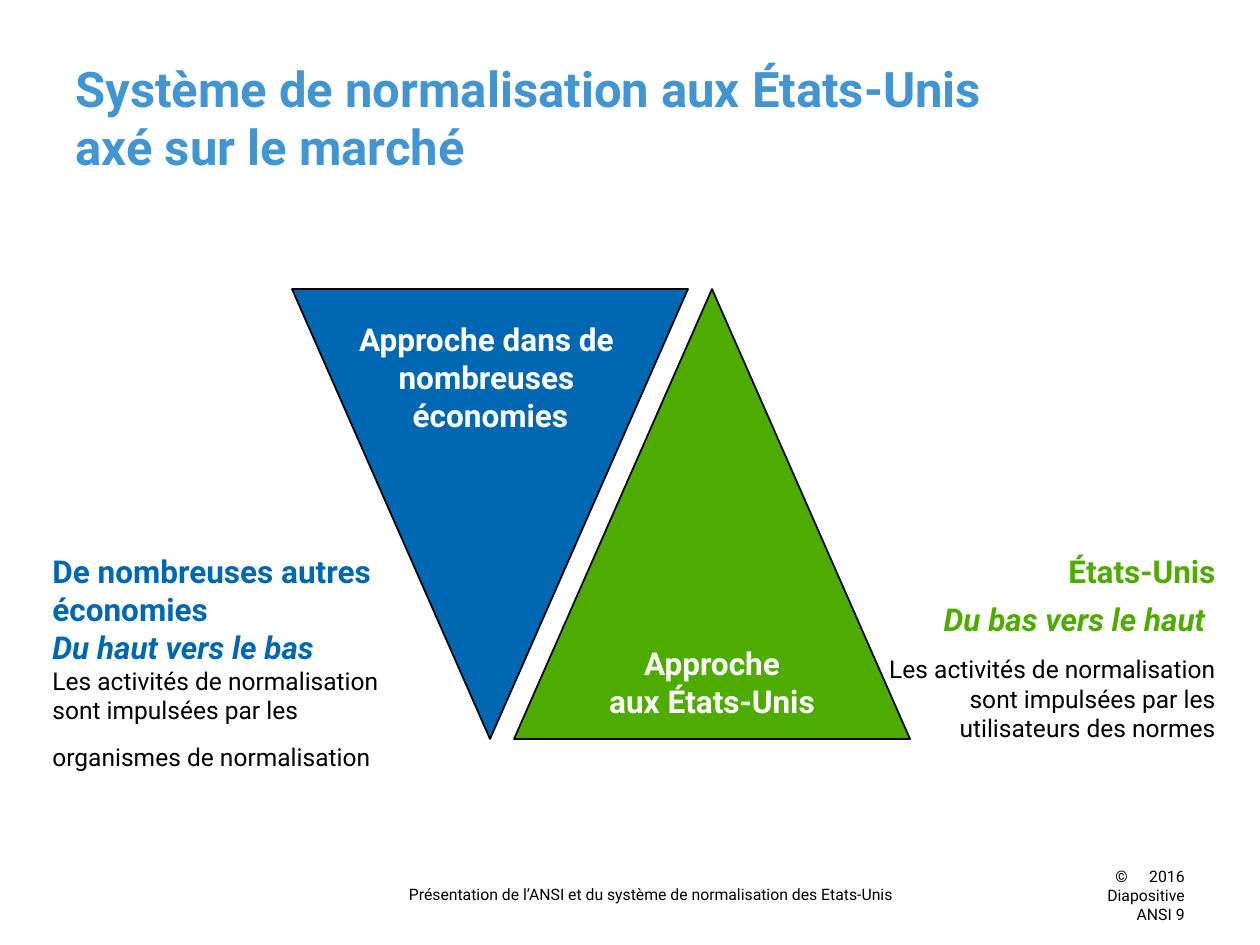
from pptx import Presentation
from pptx.dml.color import RGBColor
from pptx.enum.shapes import MSO_SHAPE
from pptx.enum.text import MSO_ANCHOR, MSO_AUTO_SIZE, PP_ALIGN as ALIGN
from pptx.oxml import parse_xml
from pptx.oxml.ns import nsdecls
from pptx.util import Pt

EMU_PER_PX = 914400 / 126
FONT = "Roboto"
COLORS = {
    "title": "4195D3",
    "blue": "0068B3",
    "green": "4EAC00",
    "white": "FFFFFF",
    "black": "000000",
}


def px(*lengths):
    """Turn px lengths into EMU."""
    return [round(length * EMU_PER_PX) for length in lengths]


def write_paragraph(paragraph, runs, align, space_before=0):
    """Fill a paragraph from (text, size, color, bold, italic) runs; a newline is a line break."""
    paragraph.alignment = align
    if space_before:
        paragraph.space_before = Pt(space_before)
    for text, size, color, bold, italic in runs:
        for index, line in enumerate(text.split("\n")):
            if index:
                paragraph.add_line_break()
            if not line:
                continue
            run = paragraph.add_run()
            run.text = line
            font_format = {"name": FONT, "size": Pt(size), "bold": bold, "italic": italic}
            for name, value in font_format.items():
                setattr(run.font, name, value)
            run.font.color.rgb = RGBColor.from_string(COLORS[color])


presentation = Presentation()
presentation.slide_width, presentation.slide_height = px(1260, 945)
slide = presentation.slides.add_slide(presentation.slide_layouts[5])

# Title
title = slide.shapes.title
title.left, title.top, title.width, title.height = px(63, 38, 1134, 158)
title_format = {
    "word_wrap": True,
    "auto_size": MSO_AUTO_SIZE.NONE,
    "vertical_anchor": MSO_ANCHOR.MIDDLE,
}
for name, value in title_format.items():
    setattr(title.text_frame, name, value)
write_paragraph(
    title.text_frame.paragraphs[0],
    [("Système de normalisation aux États-Unis\naxé sur le marché", 28, "title", True, False)],
    ALIGN.LEFT,
)

# Opposed triangles
for left, rotation, color in [(292, 180, "blue"), (514, 0, "green")]:
    triangle = slide.shapes.add_shape(
        MSO_SHAPE.FLOWCHART_EXTRACT, *px(left, 289, 396, 450))
    triangle.rotation = rotation
    triangle.shadow.inherit = False
    triangle.fill.solid()
    triangle.fill.fore_color.rgb = RGBColor.from_string(COLORS[color])
    triangle.line.color.rgb = RGBColor.from_string(COLORS["black"])
    triangle.line.width = Pt(1)

# Text boxes: place, alignment, then (runs, space before) for each paragraph
text_boxes = [
    ((290, 314, 401, 127), ALIGN.CENTER, [
        ([("Approche dans de \nnombreuses ", 18, "white", True, False)], 0),
        ([("économies", 18, "white", True, False)], 0),
    ]),
    ((514, 638, 396, 88), ALIGN.CENTER, [
        ([("Approche\naux États-Unis", 18, "white", True, False)], 0),
    ]),
    ((40, 546, 372, 237), ALIGN.LEFT, [
        ([("De nombreuses autres économies\n", 18, "blue", True, False),
          ("Du haut vers le bas", 18, "blue", True, True)], 0),
        ([("Les activités de normalisation sont impulsées par les "
           "organismes de normalisation", 14, "black", False, False),
          (" ", 24, "black", False, False)], 0),
    ]),
    ((863, 546, 365, 161), ALIGN.RIGHT, [
        ([("États-Unis\n", 18, "green", True, False),
          (" ", 24, "black", False, False),
          ("Du bas vers le haut", 18, "green", True, True),
          (" ", 24, "black", False, False)], 0),
        ([("Les activités de normalisation sont impulsées par les "
           "utilisateurs des normes", 14, "black", False, False)], 8),
    ]),
    ((262, 879, 777, 34), ALIGN.CENTER, [
        ([("Présentation de l’ANSI et du système de normalisation des Etats-Unis",
           9, "black", False, False)], 0),
    ]),
    ((1061, 861, 136, 63), ALIGN.RIGHT, [
        ([(" 2016 Diapositive ANSI 9", 9, "black", False, False)], 0),
    ]),
]
for place, align, paragraphs in text_boxes:
    text_box = slide.shapes.add_textbox(*px(*place))
    frame = text_box.text_frame
    frame.word_wrap = True
    for index, (runs, space_before) in enumerate(paragraphs):
        paragraph = frame.add_paragraph() if index else frame.paragraphs[0]
        write_paragraph(paragraph, runs, align, space_before)

# The last box is the slide number, which has a copyright sign as its bullet
properties = text_box.text_frame.paragraphs[0]._p.get_or_add_pPr()
indent, = px(30)
properties.set("marL", str(indent))
properties.set("indent", str(-indent))
properties.append(parse_xml(f'<a:buFont {nsdecls("a")} typeface="{FONT}"/>'))
properties.append(parse_xml(f'<a:buChar {nsdecls("a")} char="©"/>'))

presentation.save("out.pptx")
